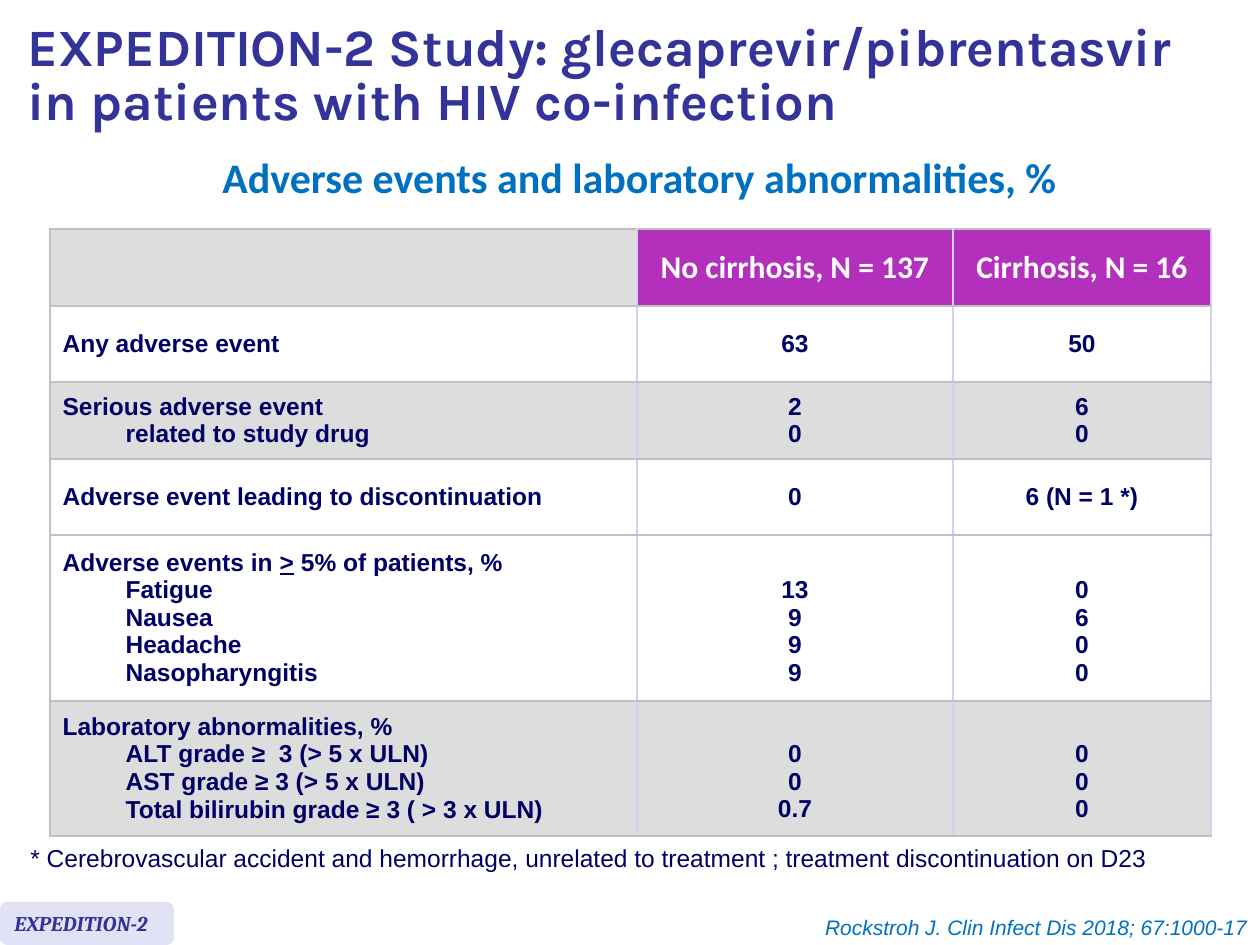
from lxml import etree
from pptx import Presentation
from pptx.dml.color import RGBColor
from pptx.enum import shapes, text as t
from pptx.oxml import ns
from pptx.util import Emu, Pt

PX = 914400 // 126
HEX = {
    "title": "333399", "blue": "0070C0", "navy": "000066", "white": "FFFFFF",
    "grey": "DDDDDD", "head": "B230BC", "tag": "E2E2F6",
    "rule": "C0C0C0", "pale": "D0D0F0",
}
COLS = [587, 316, 258]
ROWS = [77, 76, 77, 76, 166, 135]
LINE = 27
HEAD = ["", "No cirrhosis, N = 137", "Cirrhosis, N = 16"]
BODY = [
    ("white", ["Any adverse event"], ["63"], ["50"]),
    ("grey", ["Serious adverse event", "related to study drug"],
     ["2", "0"], ["6", "0"]),
    ("white", ["Adverse event leading to discontinuation"],
     ["0"], ["6 (N = 1 *)"]),
    ("white", ["Adverse events in _>_ 5% of patients, %", "Fatigue", "Nausea",
               "Headache", "Nasopharyngitis"],
     ["13", "9", "9", "9"], ["0", "6", "0", "0"]),
    ("grey", ["Laboratory abnormalities, %", "ALT grade ≥  3 (> 5 x ULN)",
              "AST grade ≥ 3 (> 5 x ULN)",
              "Total bilirubin grade ≥ 3 ( > 3 x ULN)"],
     ["0", "0", "0.7"], ["0", "0", "0"]),
]


def px(n):
    """Turn pixels into EMU."""
    return Emu(n * PX)


def rgb(name):
    """Look up a colour by name."""
    return RGBColor.from_string(HEX[name])


def write(frame, lines, size=14, font="Arial", color="navy", bold=False,
          italic=False, align="LEFT", space=None, sub=0):
    """Write paragraphs, underlining parts between underscores."""
    for i, line in enumerate(lines):
        para = frame.paragraphs[0] if i == 0 else frame.add_paragraph()
        para.alignment = getattr(t.PP_ALIGN, align)
        if space:
            para.line_spacing = space
        if sub and i:
            para.level = 1
            props = para._p.get_or_add_pPr()
            props.set("marL", str(px(sub)))
            props.set("indent", "0")
        for j, part in enumerate(line.split("_")):
            for k, piece in enumerate(part.split("\n")):
                if k:
                    para.add_line_break()
                run = para.add_run()
                run.text = piece
                face = run.font
                face.size, face.name = Pt(size), font
                face.bold, face.italic = bold, italic
                face.color.rgb = rgb(color)
                if j % 2:
                    face.underline = True


def label(slide, box, lines, anchor="TOP", **style):
    """Place a wrapped text box."""
    frame = slide.shapes.add_textbox(*map(px, box)).text_frame
    frame.word_wrap = True
    frame.vertical_anchor = getattr(t.MSO_ANCHOR, anchor)
    write(frame, lines, **style)


def edge(cell, first):
    """Draw the four borders of a cell."""
    props = cell._tc.get_or_add_tcPr()
    sides = {"L": "rule" if first else "pale", "R": "pale",
             "T": "rule", "B": "rule"}
    for side, name in sides.items():
        line = etree.SubElement(props, ns.qn("a:ln" + side), w=str(Pt(1)))
        fill = etree.SubElement(line, ns.qn("a:solidFill"))
        etree.SubElement(fill, ns.qn("a:srgbClr"), val=HEX[name])


def paint(cell, col, fill):
    """Set the borders, fill and anchor of a cell."""
    edge(cell, col == 0)
    cell.fill.solid()
    cell.fill.fore_color.rgb = rgb(fill)
    cell.vertical_anchor = t.MSO_ANCHOR.MIDDLE


def events(slide, left, top):
    """Build the table of adverse events."""
    table = slide.shapes.add_table(
        len(ROWS), len(COLS), px(left), px(top),
        px(sum(COLS)), px(sum(ROWS))).table
    table.first_row = table.horz_banding = False
    for col, wide in zip(table.columns, COLS):
        col.width = px(wide)
    for row, high in zip(table.rows, ROWS):
        row.height = px(high)
    for c, name in enumerate(HEAD):
        cell = table.cell(0, c)
        paint(cell, c, "head" if name else "grey")
        if name:
            write(cell.text_frame, [name], size=18, font="Calibri",
                  color="white", bold=True, align="CENTER")
    for r, (fill, *cells) in enumerate(BODY, 1):
        for c, lines in enumerate(cells):
            cell = table.cell(r, c)
            paint(cell, c, fill)
            short = len(cells[0]) - len(lines)
            cell.margin_top = px(6 + LINE * short)
            write(cell.text_frame, lines, bold=True, sub=0 if c else 63,
                  align="CENTER" if c else "LEFT")


def badge(slide, box, name):
    """Draw the study tag."""
    tag = slide.shapes.add_shape(
        shapes.MSO_SHAPE.ROUNDED_RECTANGLE, *map(px, box))
    tag.shadow.inherit = False
    tag.fill.solid()
    tag.fill.fore_color.rgb = rgb("tag")
    tag.line.fill.background()
    tag.text_frame.vertical_anchor = t.MSO_ANCHOR.MIDDLE
    write(tag.text_frame, [name], size=12, font="Cambria", color="title",
          bold=True, italic=True)


def main():
    """Build and save the slide."""
    deck = Presentation()
    deck.slide_width, deck.slide_height = px(1260), px(945)
    slide = deck.slides.add_slide(deck.slide_layouts[6])
    label(slide, (15, 10, 1245, 135),
          ["EXPEDITION-2 Study: glecaprevir/pibrentasvir\n"
           "in patients with HIV co-infection"],
          anchor="MIDDLE", size=30, font="Karla", color="title", bold=True,
          space=0.85)
    label(slide, (44, 169, 1191, 44),
          ["Adverse events and laboratory abnormalities, %"], size=24,
          font="Calibri", color="blue", bold=True, align="CENTER",
          space=Pt(15.2))
    events(slide, 50, 229)
    label(slide, (18, 837, 1160, 43),
          ["* Cerebrovascular accident and hemorrhage, unrelated to "
           "treatment ; treatment discontinuation on D23"])
    badge(slide, (0, 902, 174, 43), "EXPEDITION-2")
    label(slide, (333, 908, 927, 37),
          ["Rockstroh J. Clin Infect Dis 2018; 67:1000-17"], size=12,
          color="blue", italic=True, align="RIGHT")
    deck.save("out.pptx")


if __name__ == "__main__":
    main()
